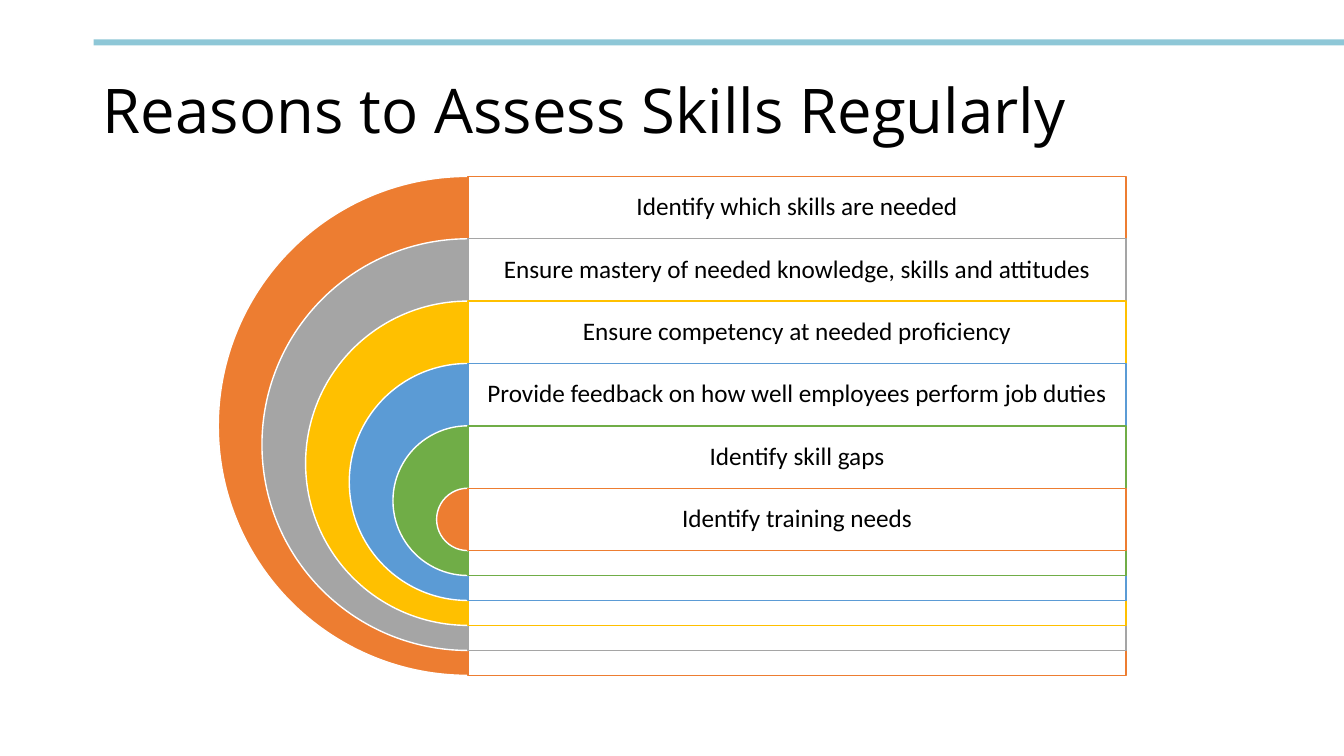
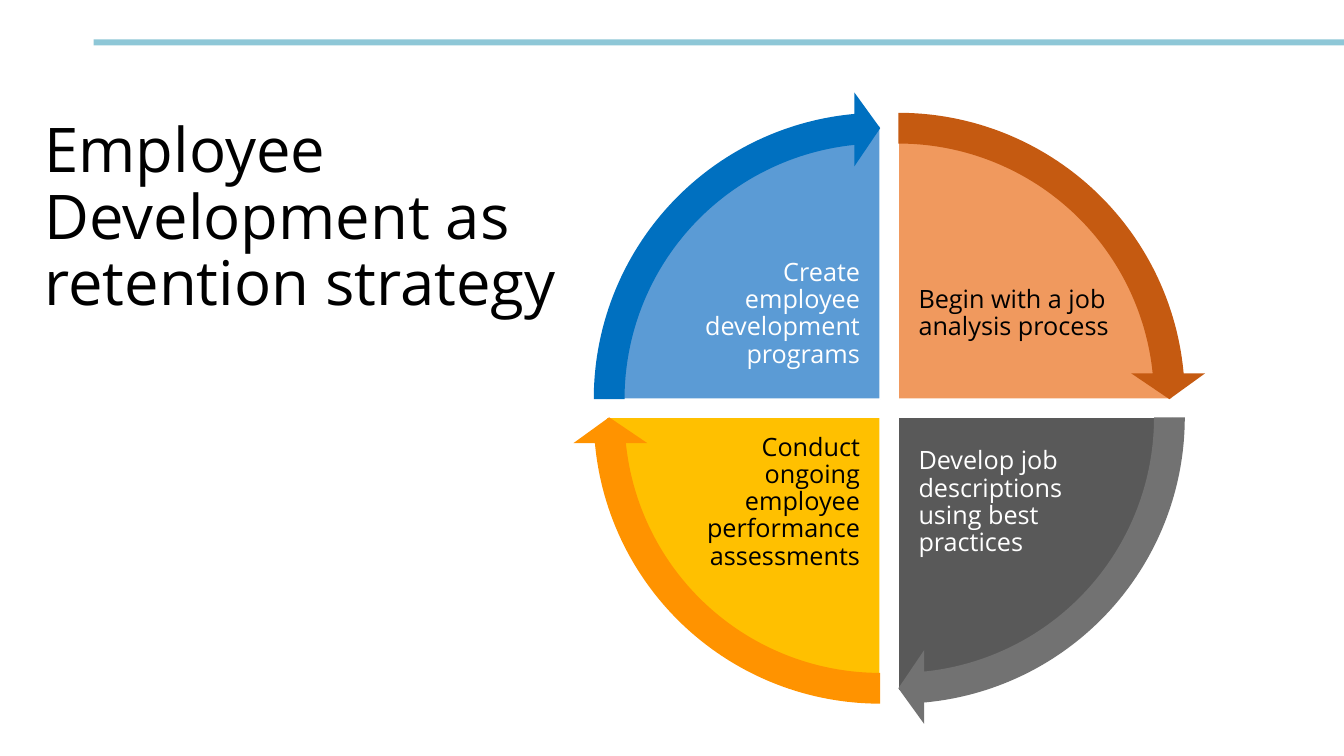
from lxml import etree
from pptx import Presentation
from pptx.dml.color import RGBColor
from pptx.enum.shapes import MSO_SHAPE
from pptx.enum.text import MSO_ANCHOR, MSO_AUTO_SIZE, PP_ALIGN
from pptx.oxml.ns import qn
from pptx.util import Inches, Pt

PIE, ARROW, RECT = MSO_SHAPE.PIE, MSO_SHAPE.CIRCULAR_ARROW, MSO_SHAPE.RECTANGLE
LEFT, CENTER, RIGHT = PP_ALIGN.LEFT, PP_ALIGN.CENTER, PP_ALIGN.RIGHT
MIDDLE, NO_FIT = MSO_ANCHOR.MIDDLE, MSO_AUTO_SIZE.NONE

WHITE = RGBColor(0xFF, 0xFF, 0xFF)
BLACK = RGBColor(0x00, 0x00, 0x00)
BAND = RGBColor(0x8E, 0xC7, 0xD7)
ORANGE = RGBColor(0xED, 0x7D, 0x31)
GRAY = RGBColor(0xA5, 0xA5, 0xA5)
GOLD = RGBColor(0xFF, 0xC0, 0x00)
BLUE = RGBColor(0x5B, 0x9B, 0xD5)
GREEN = RGBColor(0x70, 0xAD, 0x47)
DARK_ORANGE = RGBColor(0xC5, 0x5A, 0x11)
DARK_GRAY = RGBColor(0x72, 0x72, 0x72)
AMBER = RGBColor(0xFF, 0x93, 0x00)
DARK_BLUE = RGBColor(0x00, 0x70, 0xC0)

HEADING_FONT, LABEL_FONT = "Open Sans", "Calibri"
TITLE_ONLY = 5
# Angle adjustments count in units of 100000 / 60000 degree.
QUARTER, FULL_TURN = 54, 216


class Deck:
    """Holds the presentation style and the page being drawn."""

    def __init__(self):
        self.file = Presentation()
        self.file.slide_width = Inches(13.33)
        self.file.slide_height = Inches(7.5)
        self.page = None

    def add_page(self, title, *box):
        layout = self.file.slide_layouts[TITLE_ONLY]
        self.page = self.file.slides.add_slide(layout)
        self.shape(RECT, 0.93, 0.39, 12.4, 0.06, BAND)
        heading = self.page.shapes.title
        heading.left, heading.top, heading.width, heading.height = map(Inches, box)
        self.set_text(heading.text_frame, title, HEADING_FONT, 44, BLACK, LEFT)

    def set_text(self, frame, text, font, size, color, align):
        frame.word_wrap = True
        frame.auto_size = NO_FIT
        frame.vertical_anchor = MIDDLE
        para = frame.paragraphs[0]
        para.alignment = align
        para.line_spacing = 0.9
        span = para.add_run()
        span.text = text
        span.font.name = font
        span.font.size = Pt(size)
        span.font.color.rgb = color

    def label(self, text, left, top, width, height, font, color, align, inset):
        box = self.page.shapes.add_textbox(*map(Inches, (left, top, width, height)))
        frame = box.text_frame
        frame.margin_left = frame.margin_right = Inches(inset)
        frame.margin_top = frame.margin_bottom = Inches(inset)
        self.set_text(frame, text, font, 18, color, align)

    def shape(self, kind, left, top, width, height, fill, line=None,
              opacity=100, adjustments=()):
        shape = self.page.shapes.add_shape(
            kind, *map(Inches, (left, top, width, height)))
        shape.shadow.inherit = False
        for index, value in enumerate(adjustments):
            shape.adjustments[index] = value
        shape.fill.solid()
        shape.fill.fore_color.rgb = fill
        if opacity < 100:
            tint = shape.element.spPr.find(f"{qn('a:solidFill')}/{qn('a:srgbClr')}")
            etree.SubElement(tint, qn("a:alpha")).set("val", str(opacity * 1000))
        if line is None:
            shape.line.fill.background()
        else:
            shape.line.color.rgb = line
            shape.line.width = Pt(1)

    def round_shape(self, kind, center_x, center_y, size, fill, **style):
        self.shape(kind, center_x - size / 2, center_y - size / 2,
                   size, size, fill, **style)


def add_reasons(deck):
    """Nested half discs, each with a framed row to its right."""
    deck.add_page("Reasons to Assess Skills Regularly", 0.92, 0.4, 11.5, 1.45)
    reasons = [
        ("Identify which skills are needed", ORANGE),
        ("Ensure mastery of needed knowledge, skills and attitudes", GRAY),
        ("Ensure competency at needed proficiency", GOLD),
        ("Provide feedback on how well employees perform job duties", BLUE),
        ("Identify skill gaps", GREEN),
        ("Identify training needs", ORANGE),
    ]
    axis, first_top, width, largest = 4.64, 1.75, 6.53, 4.95
    row = largest / 8
    shrink = (largest - row) / (len(reasons) - 1)
    for index, (text, color) in enumerate(reasons):
        top = first_top + index * row
        size = largest - index * shrink
        deck.round_shape(PIE, axis, top + size / 2, size, color, line=WHITE,
                         adjustments=(QUARTER, 3 * QUARTER))
        deck.shape(RECT, axis, top, width, size, WHITE, line=color, opacity=90)
        deck.label(text, axis, top, width, row, LABEL_FONT, BLACK, CENTER, 0.07)


def add_strategy(deck):
    """Four quarter discs in a cycle, each with a curved arrow on its rim."""
    deck.add_page("Employee Development as retention strategy", 0.34, 0.4, 6.25, 3.55)
    left_x, right_x, upper_y, lower_y = 8.73, 8.91, 3.96, 4.14
    text_width, text_height, gap_x, gap_y = 2.01, 1.49, 0.17, 0.1
    quarters = [
        ("Begin with a job analysis process", right_x, upper_y, 3 * QUARTER,
         ORANGE, 78, BLACK, DARK_ORANGE),
        ("Develop job descriptions using best practices", right_x, lower_y, 0,
         BLACK, 65, WHITE, DARK_GRAY),
        ("Conduct ongoing employee performance assessments", left_x, lower_y, QUARTER,
         GOLD, 100, BLACK, AMBER),
        ("Create employee development programs", left_x, upper_y, 2 * QUARTER,
         BLUE, 100, WHITE, DARK_BLUE),
    ]
    for text, x, y, start, fill, opacity, ink, _ in quarters:
        deck.round_shape(PIE, x, y, 5.43, fill, line=WHITE, opacity=opacity,
                         adjustments=(start, (start + QUARTER) % FULL_TURN))
        on_right, is_lower = x == right_x, y == lower_y
        left = x + gap_x if on_right else x - gap_x - text_width
        top = y + gap_y if is_lower else y - gap_y - text_height
        deck.label(text, left, top, text_width, text_height, HEADING_FONT, ink,
                   LEFT if on_right else RIGHT, 0.03)
    head = 3.28
    for _, x, y, start, _, _, _, rim in quarters:
        deck.round_shape(ARROW, x, y, 6.11, rim, adjustments=(
            0.05, head, start + QUARTER - head, start, 0.06))


def main():
    deck = Deck()
    add_reasons(deck)
    add_strategy(deck)
    deck.file.save("out.pptx")


if __name__ == "__main__":
    main()
